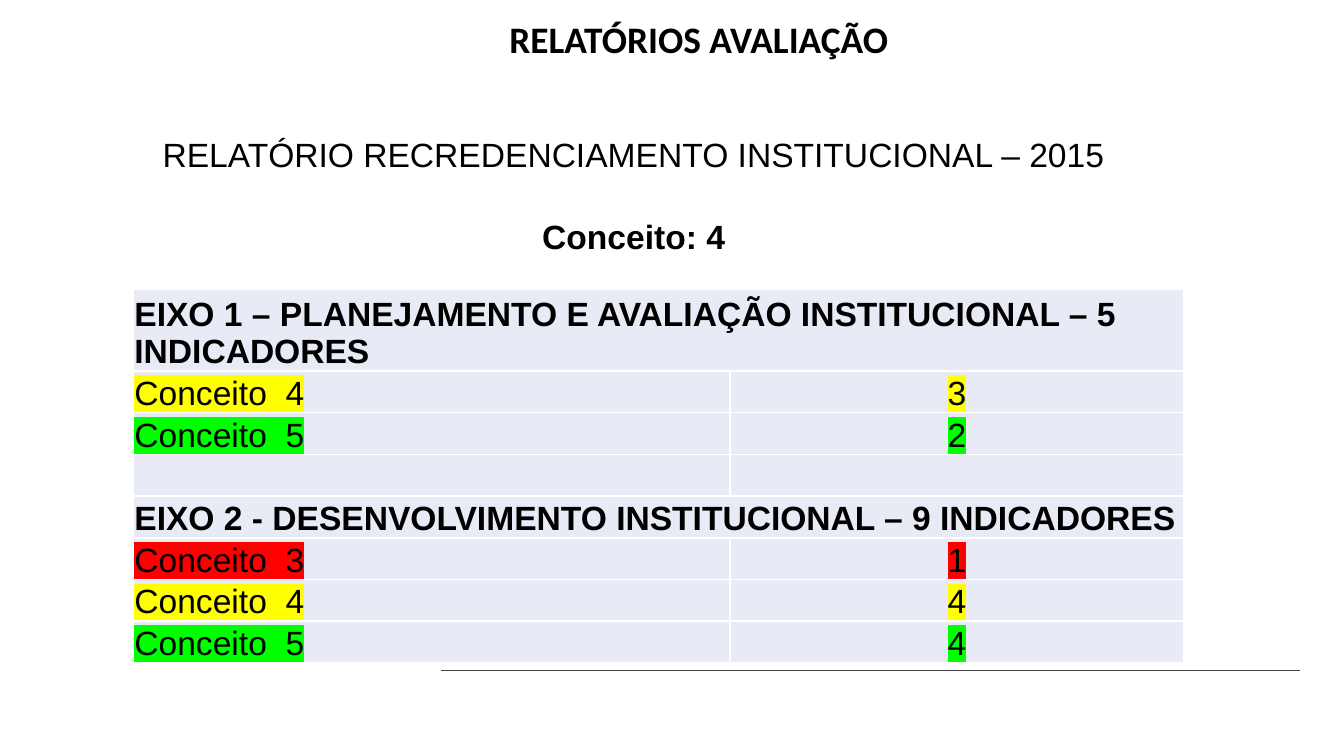
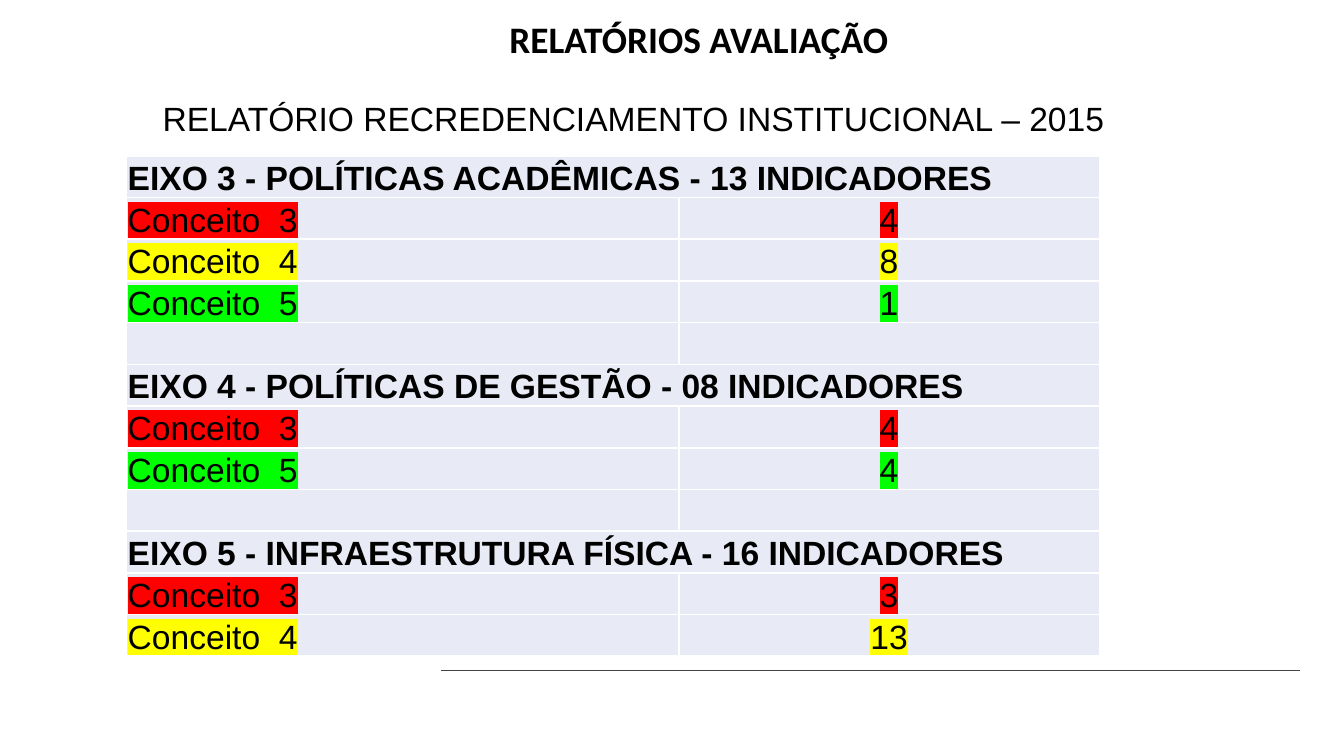
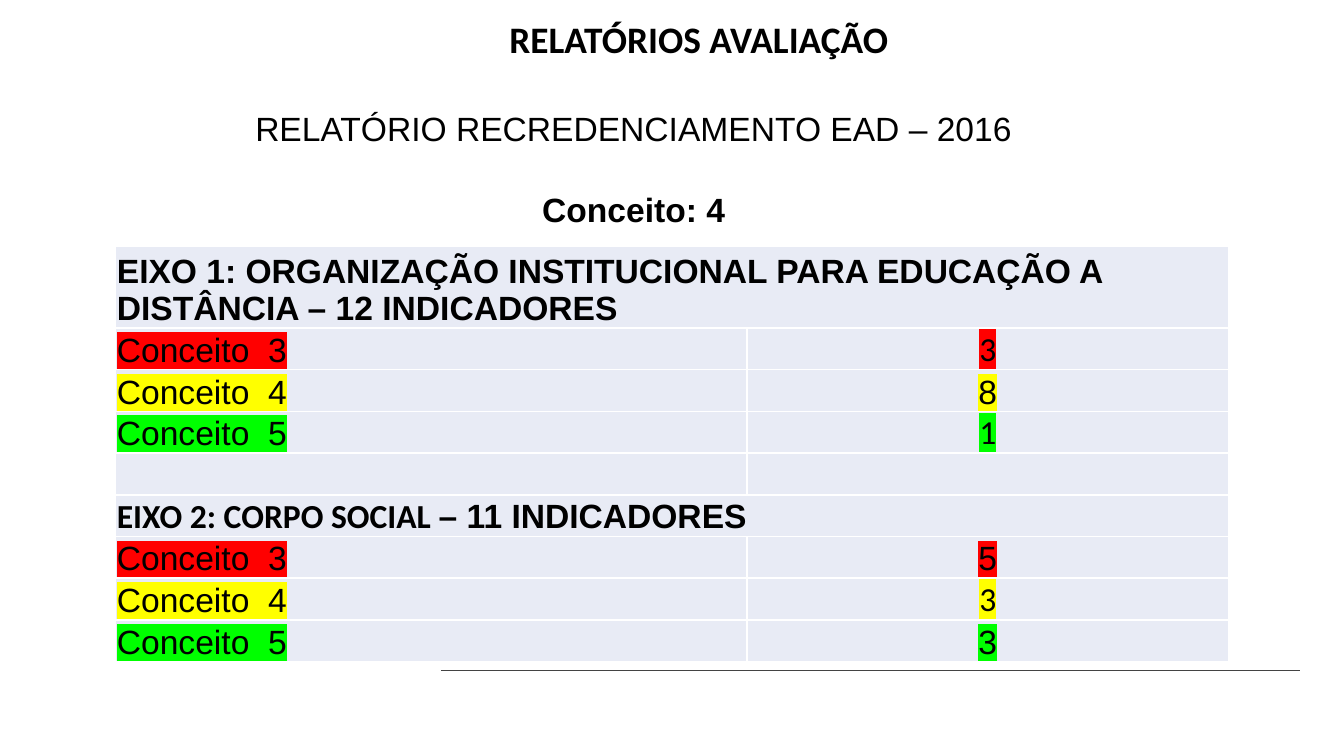
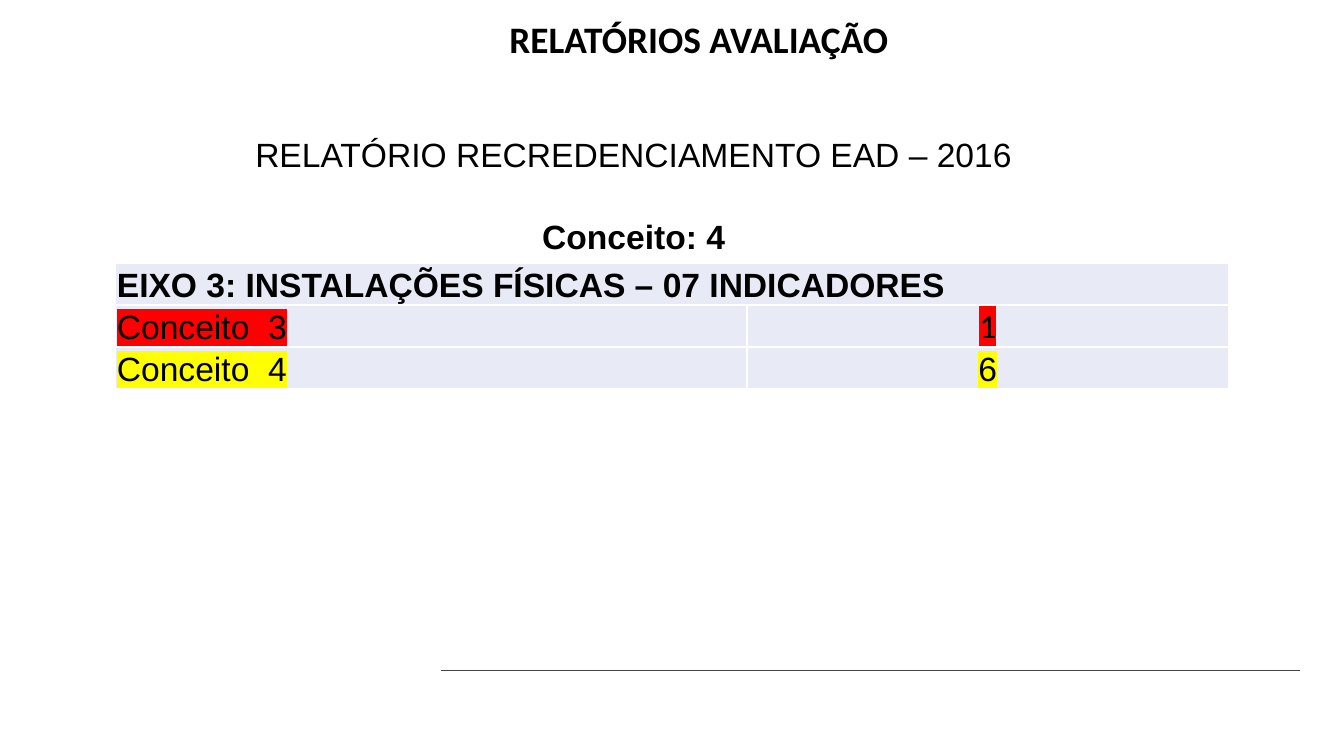
from lxml import etree
from pptx import Presentation
from pptx.dml.color import RGBColor
from pptx.enum.shapes import MSO_CONNECTOR
from pptx.enum.text import MSO_ANCHOR, PP_ALIGN
from pptx.oxml.ns import qn
from pptx.util import Inches, Pt

LEFT, CENTER = PP_ALIGN.LEFT, PP_ALIGN.CENTER
BOTTOM = MSO_ANCHOR.BOTTOM
STRAIGHT = MSO_CONNECTOR.STRAIGHT

ARIAL, CALIBRI = "Arial", "Calibri"
BLACK, WHITE, RULE_GRAY, CELL_FILL = "000000", "FFFFFF", "434343", "E8EBF5"
CONCEPT_COLORS = {3: "FF0000", 4: "FFFF00", 5: "00FF00"}
ROW_HEIGHT = 0.31

INSTITUTIONAL = "RELATÓRIO RECREDENCIAMENTO INSTITUCIONAL – 2015"
DISTANCE = "RELATÓRIO RECREDENCIAMENTO EAD – 2016"
GRADE = "Conceito: 4"

# Each axis holds its heading runs (text, font) and its scores
# (concept, number of indicators, font of the number).
REPORTS = [
    {
        "heading": INSTITUTIONAL, "grade": GRADE, "heading_box": (0.65, 1.31),
        "table_at": (0.99, 2.15), "columns": (4.44, 3.38),
        "axes": [
            ([("EIXO 1 – PLANEJAMENTO E AVALIAÇÃO INSTITUCIONAL – 5 INDICADORES", ARIAL)],
             [(4, 3, ARIAL), (5, 2, ARIAL)]),
            ([("EIXO 2 - DESENVOLVIMENTO INSTITUCIONAL – 9 INDICADORES", ARIAL)],
             [(3, 1, ARIAL), (4, 4, ARIAL), (5, 4, ARIAL)]),
        ],
    },
    {
        "heading": INSTITUTIONAL, "grade": None, "heading_box": (0.38, 1.01),
        "table_at": (0.94, 1.16), "columns": (4.11, 3.13),
        "axes": [
            ([("EIXO 3 - POLÍTICAS ACADÊMICAS - 13 INDICADORES", ARIAL)],
             [(3, 4, ARIAL), (4, 8, ARIAL), (5, 1, ARIAL)]),
            ([("EIXO 4 - POLÍTICAS DE GESTÃO - 08 INDICADORES", ARIAL)],
             [(3, 4, ARIAL), (5, 4, ARIAL)]),
            ([("EIXO 5 - INFRAESTRUTURA FÍSICA - 16 INDICADORES", ARIAL)],
             [(3, 3, ARIAL), (4, 13, ARIAL)]),
        ],
    },
    {
        "heading": DISTANCE, "grade": GRADE, "heading_box": (0.45, 1.31),
        "table_at": (0.86, 1.83), "columns": (4.7, 3.58),
        "axes": [
            ([("EIXO 1: ORGANIZAÇÃO INSTITUCIONAL PARA EDUCAÇÃO A DISTÂNCIA – 12 INDICADORES", ARIAL)],
             [(3, 3, CALIBRI), (4, 8, ARIAL), (5, 1, CALIBRI)]),
            ([("EIXO 2: CORPO SOCIAL ", CALIBRI), ("– 11 INDICADORES", ARIAL)],
             [(3, 5, ARIAL), (4, 3, CALIBRI), (5, 3, ARIAL)]),
        ],
    },
    {
        "heading": DISTANCE, "grade": GRADE, "heading_box": (0.65, 1.31),
        "table_at": (0.86, 1.96), "columns": (4.7, 3.58),
        "axes": [
            ([("EIXO 3: INSTALAÇÕES FÍSICAS – 07 INDICADORES", ARIAL)],
             [(3, 1, CALIBRI), (4, 6, ARIAL)]),
        ],
    },
]


def rgb(color):
    return RGBColor.from_string(color)


def add_color(parent, tag, color):
    holder = etree.SubElement(parent, qn(tag))
    etree.SubElement(holder, qn("a:srgbClr")).set("val", color)
    return holder


class Deck:
    """Holds the shared style and the slide being built."""

    def __init__(self):
        self.presentation = Presentation()
        self.presentation.slide_width = Inches(10)
        self.presentation.slide_height = Inches(10) * 9 // 16
        self.slide = None

    def new_slide(self):
        self.slide = self.presentation.slides.add_slide(self.presentation.slide_layouts[6])
        background = self.slide.background.fill
        background.solid()
        background.fore_color.rgb = rgb(WHITE)
        self.rule()
        self.title("RELATÓRIOS AVALIAÇÃO")

    def rule(self):
        line = self.slide.shapes.add_connector(
            STRAIGHT, Inches(3.28), Inches(4.99), Inches(9.67), Inches(4.99))
        line.line.color.rgb = rgb(RULE_GRAY)
        line.line.width = Pt(0.75)
        etree.SubElement(line._element.spPr, qn("a:effectLst"))

    def run(self, paragraph, text, font=ARIAL, size=18, bold=False, highlight=None):
        run = paragraph.add_run()
        run.text = text
        run.font.size = Pt(size)
        run.font.bold = bold
        run.font.color.rgb = rgb(BLACK)
        run.font.name = font
        if highlight:
            properties = run.font._element
            marker = add_color(properties, "a:highlight", highlight)
            properties.find(qn("a:solidFill")).addnext(marker)

    def text_frame(self, left, top, width, height, top_inset, bottom_inset):
        box = self.slide.shapes.add_textbox(
            Inches(left), Inches(top), Inches(width), Inches(height))
        frame = box.text_frame
        frame.word_wrap = True
        frame.margin_left = frame.margin_right = Inches(0.1)
        frame.margin_top = Inches(top_inset)
        frame.margin_bottom = Inches(bottom_inset)
        return frame

    def title(self, text):
        paragraph = self.text_frame(0.54, 0.02, 9.32, 0.62, 0.1, 0.1).paragraphs[0]
        paragraph.alignment = CENTER
        paragraph.space_before = Pt(1.1)
        self.run(paragraph, text, CALIBRI, 20, True)

    def heading(self, top, height, report_name, grade):
        """Write the report name one line below the top, and the grade under it."""
        frame = self.text_frame(0.75, top, 7.93, height, 0.35, 0.05)
        name_line = frame.paragraphs[0]
        name_line.alignment = CENTER
        self.run(name_line, report_name)
        if grade:
            grade_line = frame.add_paragraph()
            grade_line.alignment = CENTER
            grade_line.space_before = Pt(22)
            self.run(grade_line, grade, bold=True)

    def style_cell(self, cell):
        cell.margin_left = cell.margin_right = cell.margin_top = Inches(0.01)
        cell.margin_bottom = 0
        cell.vertical_anchor = BOTTOM
        properties = cell._tc.get_or_add_tcPr()
        for side in ("a:lnL", "a:lnR", "a:lnT", "a:lnB"):
            border = etree.SubElement(properties, qn(side), w=str(Pt(1)))
            add_color(border, "a:solidFill", WHITE)
        cell.fill.solid()
        cell.fill.fore_color.rgb = rgb(CELL_FILL)

    def score_cell(self, cell, text, font, alignment, highlight):
        paragraph = cell.text_frame.paragraphs[0]
        paragraph.alignment = alignment
        self.run(paragraph, text, font, highlight=highlight)

    def axis_table(self, left, top, columns, axes):
        """Stack the axes in one table, with an empty row between two axes."""
        row_count = sum(len(scores) + 2 for _, scores in axes) - 1
        table = self.slide.shapes.add_table(
            row_count, len(columns), Inches(left), Inches(top),
            Inches(sum(columns)), Inches(ROW_HEIGHT * row_count)).table
        table.first_row = table.horz_banding = False
        for column, width in zip(table.columns, columns):
            column.width = Inches(width)
        for row in table.rows:
            row.height = Inches(ROW_HEIGHT)
            for cell in row.cells:
                self.style_cell(cell)

        row = 0
        for heading, scores in axes:
            heading_cell = table.cell(row, 0)
            heading_cell.merge(table.cell(row, 1))
            for text, font in heading:
                self.run(heading_cell.text_frame.paragraphs[0], text, font, bold=True)
            for row, (concept, count, font) in enumerate(scores, row + 1):
                color = CONCEPT_COLORS[concept]
                self.score_cell(table.cell(row, 0), f"Conceito  {concept}", ARIAL, LEFT, color)
                self.score_cell(table.cell(row, 1), str(count), font, CENTER, color)
            row += 2


def main():
    deck = Deck()
    for report in REPORTS:
        deck.new_slide()
        deck.heading(*report["heading_box"], report["heading"], report["grade"])
        deck.axis_table(*report["table_at"], report["columns"], report["axes"])
    deck.presentation.save("out.pptx")


if __name__ == "__main__":
    main()
